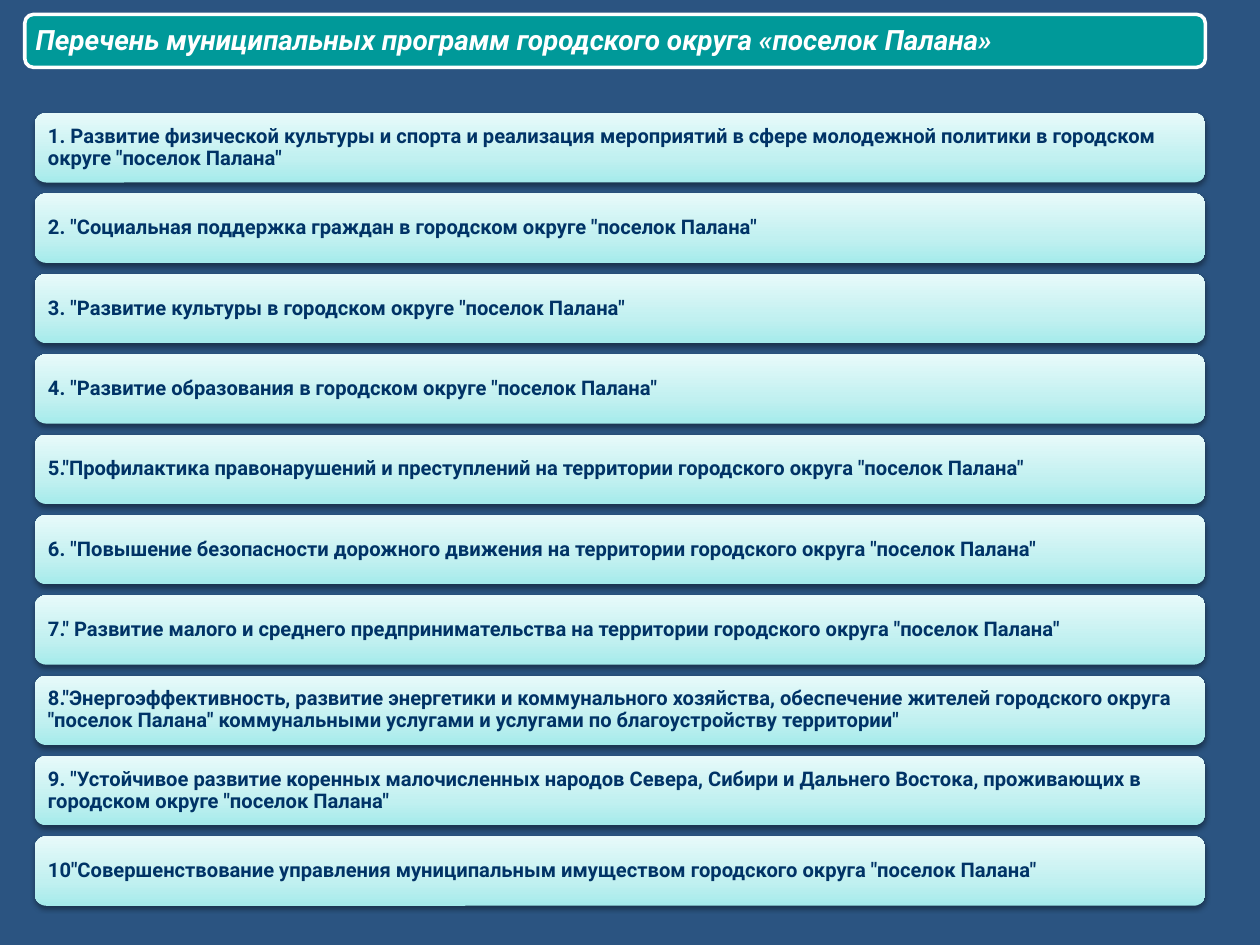
import pptx
import pptx.util
import pptx.oxml
import pptx.oxml.ns
import pptx.dml.color
import pptx.enum.shapes
import pptx.enum.text
from pptx.util import Cm

COLORS = {"bg": "2B5481", "bar": "009999", "white": "FFFFFF", "text": "003366",
          "card_bottom": "A5EBEB", "card_mid": "C1F0F0", "card_top": "E7FAFA",
          "shadow": "000000"}

PROGRAMS = [
    '1. Развитие физической культуры и спорта и реализация мероприятий в сфере молодежной политики в городском округе "поселок Палана"',
    '2. "Социальная поддержка граждан в городском округе "поселок Палана"',
    '3. "Развитие культуры в городском округе "поселок Палана"',
    '4. "Развитие образования в городском округе "поселок Палана"',
    '5."Профилактика правонарушений и преступлений на территории городского округа "поселок Палана"',
    '6. "Повышение безопасности дорожного движения на территории городского округа "поселок Палана"',
    '7." Развитие малого и среднего предпринимательства на территории городского округа "поселок Палана"',
    '8."Энергоэффективность, развитие энергетики и коммунального хозяйства, обеспечение жителей городского округа "поселок Палана" коммунальными услугами и услугами по благоустройству территории"',
    '9. "Устойчивое развитие коренных малочисленных народов Севера, Сибири и Дальнего Востока, проживающих в городском округе "поселок Палана"',
    '10"Совершенствование управления муниципальным имуществом городского округа "поселок Палана"',
]

NS = pptx.oxml.ns.nsdecls("a")
STOPS = [(0, "card_bottom"), (35, "card_mid"), (100, "card_top")]
GRADIENT = (f'<a:gradFill {NS} rotWithShape="1"><a:gsLst>'
            + "".join(f'<a:gs pos="{pos * 1000}"><a:srgbClr val="{COLORS[c]}"/></a:gs>'
                      for pos, c in STOPS)
            + '</a:gsLst><a:lin ang="16200000" scaled="0"/></a:gradFill>')
SHADOW = (f'<a:effectLst {NS}><a:outerShdw blurRad="40000" dist="20000" dir="5400000" '
          f'rotWithShape="0"><a:srgbClr val="{COLORS["shadow"]}"><a:alpha val="38000"/>'
          '</a:srgbClr></a:outerShdw></a:effectLst>')


def rgb(name):
    return pptx.dml.color.RGBColor.from_string(COLORS[name])


def write(sp, text, size, color, inset, italic=False):
    tf = sp.text_frame
    tf.word_wrap = True
    tf.auto_size = pptx.enum.text.MSO_AUTO_SIZE.NONE
    tf.vertical_anchor = pptx.enum.text.MSO_ANCHOR.MIDDLE
    tf.margin_left = tf.margin_right = tf.margin_top = tf.margin_bottom = Cm(inset)
    p = tf.paragraphs[0]
    p.alignment = pptx.enum.text.PP_ALIGN.LEFT
    p.line_spacing = 0.9
    p.space_before = pptx.util.Pt(0)
    r = p.add_run()
    r.text = text
    r.font.name = "Roboto"
    r.font.size = pptx.util.Pt(size)
    r.font.bold = True
    r.font.italic = italic
    r.font.color.rgb = rgb(color)


prs = pptx.Presentation()
prs.slide_width, prs.slide_height = Cm(25.4), Cm(19.05)
s = prs.slides.add_slide(prs.slide_layouts[5])
s.background.fill.solid()
s.background.fill.fore_color.rgb = rgb("bg")
ROUNDED = pptx.enum.shapes.MSO_SHAPE.ROUNDED_RECTANGLE

# Program cards, evenly spaced
for i, text in enumerate(PROGRAMS):
    sp = s.shapes.add_shape(ROUNDED, Cm(0.7), Cm(2.28 + 1.62 * i), Cm(23.6), Cm(1.4))
    sp.line.fill.background()
    spPr = sp._element.spPr
    spPr.find(pptx.oxml.ns.qn("a:prstGeom")).addnext(pptx.oxml.parse_xml(GRADIENT))
    spPr.append(pptx.oxml.parse_xml(SHADOW))
    write(sp, text, 11.5, "text", 0.2)

# Title bar
bar = s.shapes.add_shape(ROUNDED, Cm(0.5), Cm(0.29), Cm(23.8), Cm(1.07))
bar.shadow.inherit = False
bar.fill.solid()
bar.fill.fore_color.rgb = rgb("bar")
bar.line.color.rgb = rgb("white")
bar.line.width = pptx.util.Pt(2)

# Title, brought in front of its bar
title = s.shapes.title
title.left, title.top, title.width, title.height = Cm(0.55), Cm(0.35), Cm(23.7), Cm(0.96)
write(title, "Перечень муниципальных программ городского округа «поселок Палана»",
      16, "white", 0.17, italic=True)
bar._element.addnext(title._element)

prs.save("out.pptx")
